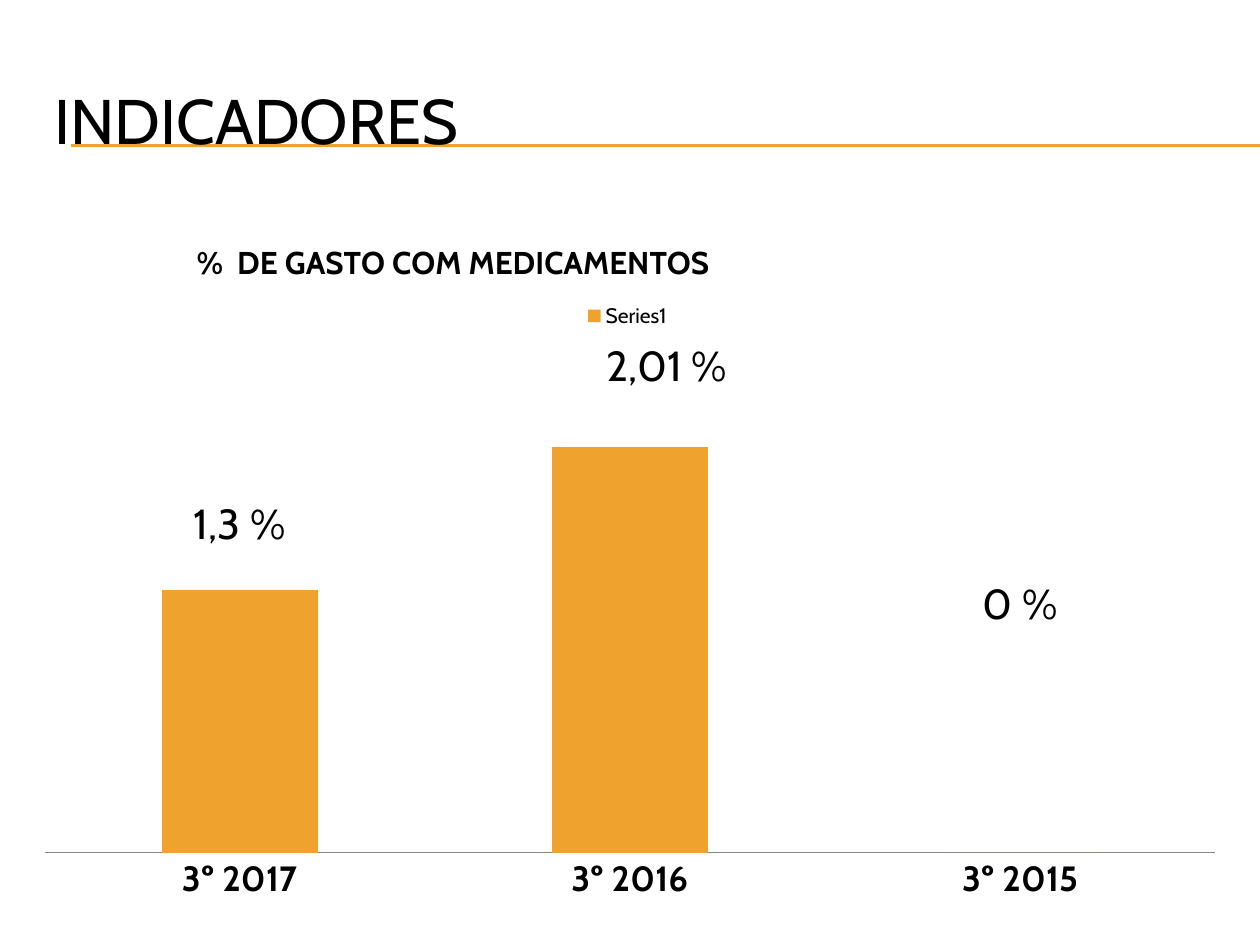
from dataclasses import dataclass

from lxml.etree import SubElement
from pptx import Presentation
from pptx.chart.data import CategoryChartData
from pptx.dml.color import RGBColor
from pptx.enum.chart import XL_CHART_TYPE as ChartType
from pptx.enum.chart import XL_LABEL_POSITION as LabelPosition
from pptx.enum.chart import XL_LEGEND_POSITION as LegendPosition
from pptx.enum.chart import XL_TICK_LABEL_POSITION as TickLabelPosition
from pptx.enum.chart import XL_TICK_MARK as TickMark
from pptx.enum.shapes import MSO_CONNECTOR as Connector
from pptx.enum.text import MSO_ANCHOR as Anchor
from pptx.enum.text import PP_ALIGN as Align
from pptx.oxml.ns import qn
from pptx.util import Inches, Pt


@dataclass(frozen=True)
class Theme:
    font: str = "Cabin"
    text: RGBColor = RGBColor(0x00, 0x00, 0x00)
    accent: RGBColor = RGBColor(0xF0, 0xA2, 0x2E)
    axis: RGBColor = RGBColor(0x86, 0x86, 0x86)
    title: Pt = Pt(36)
    value: Pt = Pt(24)
    category: Pt = Pt(20)
    chart_title: Pt = Pt(18)
    legend: Pt = Pt(12)
    base: Pt = Pt(10)
    line: Pt = Pt(0.75)


THEME = Theme()

# Category, value, label text, label shift as fractions of the chart
SPENDING = [
    ("3º 2017", 1.3, "1,3 %", (0, -0.05)),
    ("3º 2016", 2.01, "2,01 %", (0.03, -0.07)),
    ("3º 2015", 0, "0 %", (0, -0.31)),
]


def style_font(font, size, bold=False):
    font.name = THEME.font
    font.size = size
    font.bold = bold
    font.color.rgb = THEME.text


def add_span(para, text, size, bold=False):
    span = para.add_run()
    span.text = text
    style_font(span.font, size, bold)


def set_layout(element, position, **settings):
    """Place a chart part by hand, its layout going in at the given child position."""
    for old in element.findall(qn("c:layout")):
        element.remove(old)
    layout = SubElement(element, qn("c:layout"))
    element.insert(position, layout)
    manual = SubElement(layout, qn("c:manualLayout"))
    for name, value in settings.items():
        SubElement(manual, qn(f"c:{name}")).set("val", str(value))


def add_header(page, left, top, width, height):
    title = page.shapes.title
    title.left, title.top, title.width, title.height = left, top, width, height
    frame = title.text_frame
    frame.vertical_anchor = Anchor.MIDDLE
    para = frame.paragraphs[0]
    para.alignment = Align.LEFT
    add_span(para, "INDICADORES", THEME.title)


def add_rules(page, left, top, right, gap):
    """Draw the double rule behind the title."""
    for y in (top, top + gap):
        rule = page.shapes.add_connector(Connector.STRAIGHT, left, y, right, y)
        rule.line.color.rgb = THEME.accent
        rule.line.width = THEME.line
        SubElement(rule.element.spPr, qn("a:effectLst"))
        page.shapes.title.element.addprevious(rule.element)


def style_axes(chart):
    categories = chart.category_axis
    categories.major_tick_mark = TickMark.NONE
    categories.minor_tick_mark = TickMark.NONE
    categories.tick_label_position = TickLabelPosition.NEXT_TO_AXIS
    categories.format.line.color.rgb = THEME.axis
    categories.format.line.width = THEME.line
    style_font(categories.tick_labels.font, THEME.category, True)
    values = chart.value_axis
    values.visible = False
    values.has_major_gridlines = False
    values.minimum_scale, values.maximum_scale = 0, 2.5


def style_bars(plot):
    plot.gap_width = 150
    plot.vary_by_categories = False
    bars = plot.series[0]
    bars.format.fill.solid()
    bars.format.fill.fore_color.rgb = THEME.accent
    # An unnamed series gets its legend entry from the application
    bars._element.remove(bars._element.find(qn("c:tx")))

    labels = bars.data_labels
    labels.show_value = True
    style_font(labels.font, THEME.value, True)
    for leader in labels._element.findall(qn("c:showLeaderLines")):
        leader.set("val", "0")
    for point, (_, _, text, _) in zip(bars.points, SPENDING):
        label = point.data_label
        add_span(label.text_frame.paragraphs[0], text, THEME.value)
        label.position = LabelPosition.OUTSIDE_END
    for element, (_, _, _, (x, y)) in zip(labels._element.findall(qn("c:dLbl")), SPENDING):
        set_layout(element, 1, x=x, y=y)


def add_spending_chart(page, left, top, width, height):
    data = CategoryChartData()
    data.categories = [row[0] for row in SPENDING]
    data.add_series("", [row[1] for row in SPENDING])
    chart = page.shapes.add_chart(
        ChartType.COLUMN_CLUSTERED, left, top, width, height, data
    ).chart
    style_font(chart.font, THEME.base)

    chart.has_title = True
    heading = chart.chart_title
    add_span(heading.text_frame.paragraphs[0], "%  DE GASTO COM MEDICAMENTOS", THEME.chart_title, True)
    set_layout(heading._element, 1, xMode="edge", yMode="edge", x=0.14, y=0.03)

    chart.has_legend = True
    chart.legend.position = LegendPosition.TOP
    chart.legend.include_in_layout = False
    style_font(chart.legend.font, THEME.legend)
    set_layout(chart.legend._element, 1, xMode="edge", yMode="edge", x=0.46, y=0.12)

    style_axes(chart)
    style_bars(chart.plots[0])
    plot_area = chart._chartSpace.chart.plotArea
    set_layout(plot_area, 0, layoutTarget="inner", xMode="edge", yMode="edge",
               x=0.02, y=0.19, w=0.96, h=0.72)


def main():
    deck = Presentation()
    deck.slide_width, deck.slide_height = Inches(10), Inches(7.5)
    page = deck.slides.add_slide(deck.slide_layouts[5])
    add_header(page, Inches(0.33), Inches(0.49), Inches(9.5), Inches(0.92))
    add_rules(page, Inches(0.56), Inches(1.15), deck.slide_width, Inches(0.01))
    add_spending_chart(page, Inches(0.16), Inches(1.7), Inches(9.68), Inches(5.57))
    deck.save("out.pptx")


if __name__ == "__main__":
    main()
